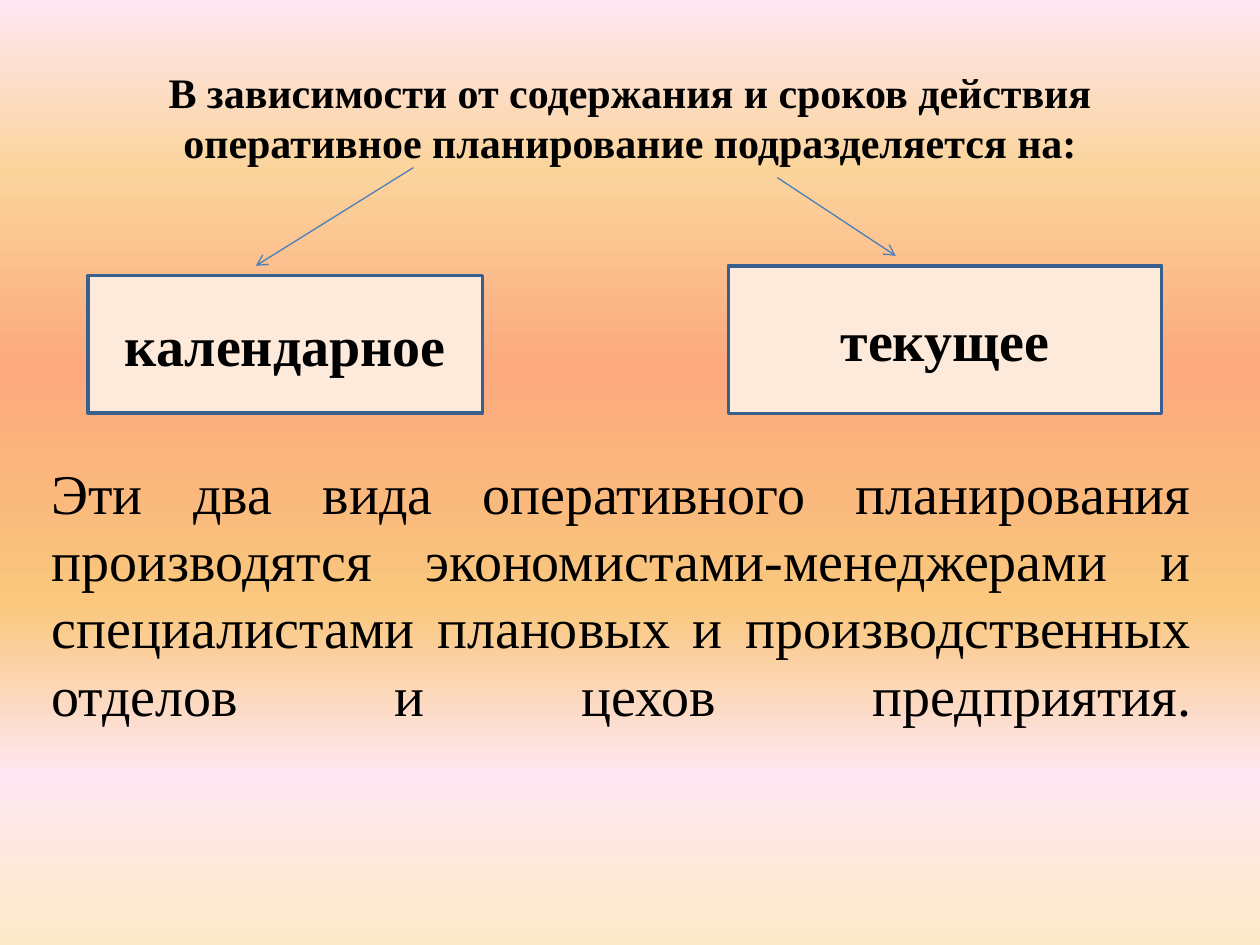
import pptx
import pptx.util
import pptx.dml.color
import pptx.enum.shapes
import pptx.enum.text
import pptx.oxml
import pptx.oxml.ns

Pt = pptx.util.Pt
qn = pptx.oxml.ns.qn
ALIGN = pptx.enum.text.PP_ALIGN
ANCHOR = pptx.enum.text.MSO_ANCHOR

FONT = "Times New Roman"
BACKGROUND_STOPS = [(0, "FBEAC7"), (18, "FEE7F2"), (36, "FAC77D"),
                    (61, "FBA97D"), (82, "FBD49C"), (100, "FEE7F2")]


def color(value):
    return pptx.dml.color.RGBColor.from_string(value)


def paint_background(slide):
    fill = slide.background.fill
    fill.gradient()
    fill.gradient_angle = 90
    stop_list = slide.element.find(".//" + qn("a:gsLst"))
    for stop in list(stop_list):
        stop_list.remove(stop)
    for position, value in BACKGROUND_STOPS:
        stop = stop_list.makeelement(qn("a:gs"), {"pos": str(position * 1000)})
        stop.append(stop.makeelement(qn("a:srgbClr"), {"val": value}))
        stop_list.append(stop)


def write(shape, text, size, bold, align, anchor):
    frame = shape.text_frame
    frame.word_wrap = True
    frame.vertical_anchor = anchor
    paragraph = frame.paragraphs[0]
    paragraph.text = text
    paragraph.alignment = align
    for run in paragraph.runs:
        run.font.name = FONT
        run.font.size = Pt(size)
        run.font.bold = bold
        run.font.color.rgb = color("000000")


def add_text(slide, bounds, text, size, bold, align, anchor):
    box = slide.shapes.add_textbox(*map(Pt, bounds))
    write(box, text, size, bold, align, anchor)
    return box


def add_planning_type(slide, bounds, text):
    rectangle = slide.shapes.add_shape(
        pptx.enum.shapes.MSO_SHAPE.RECTANGLE, *map(Pt, bounds))
    rectangle.shadow.inherit = False
    rectangle.fill.solid()
    rectangle.fill.fore_color.rgb = color("FDEADA")
    rectangle.line.color.rgb = color("3A5F8C")
    rectangle.line.width = Pt(2)
    write(rectangle, text, 32, True, ALIGN.CENTER, ANCHOR.MIDDLE)


def add_arrow(slide, start, end):
    arrow = slide.shapes.add_connector(
        pptx.enum.shapes.MSO_CONNECTOR.STRAIGHT, *map(Pt, start + end))
    arrow.line.color.rgb = color("4B7EBC")
    arrow.line.width = Pt(0.75)
    line = arrow.line._get_or_add_ln()
    line.append(line.makeelement(qn("a:tailEnd"), {"type": "arrow"}))
    properties = arrow.element.spPr
    properties.append(properties.makeelement(qn("a:effectLst"), {}))


def main():
    presentation = pptx.Presentation()
    presentation.slide_width = Pt(720)
    presentation.slide_height = Pt(540)
    slide = presentation.slides.add_slide(presentation.slide_layouts[6])
    paint_background(slide)

    # Heading
    add_text(slide, (36, 21.6, 648, 90),
             "В зависимости от содержания и сроков действия "
             "оперативное планирование подразделяется на:",
             24, True, ALIGN.CENTER, ANCHOR.MIDDLE)

    # Two types of planning
    add_planning_type(slide, (50.4, 157.5, 225.4, 78.7), "календарное")
    add_planning_type(slide, (416.2, 151.9, 247.7, 84.3), "текущее")

    # Arrows from the heading to the types
    add_arrow(slide, (236.2, 95.8), (146.2, 151.9))
    add_arrow(slide, (444.2, 101.5), (511.9, 146.2))

    # Explanation; the closing line break keeps its last line justified
    explanation = add_text(
        slide, (22.3, 258.5, 666, 184.3),
        "Эти два вида оперативного планирования производятся "
        "экономистами-менеджерами и специалистами плановых и "
        "производственных отделов и цехов предприятия.\v",
        32, False, ALIGN.JUSTIFY, ANCHOR.TOP)
    explanation.text_frame.auto_size = pptx.enum.text.MSO_AUTO_SIZE.SHAPE_TO_FIT_TEXT

    presentation.save("out.pptx")


if __name__ == "__main__":
    main()
